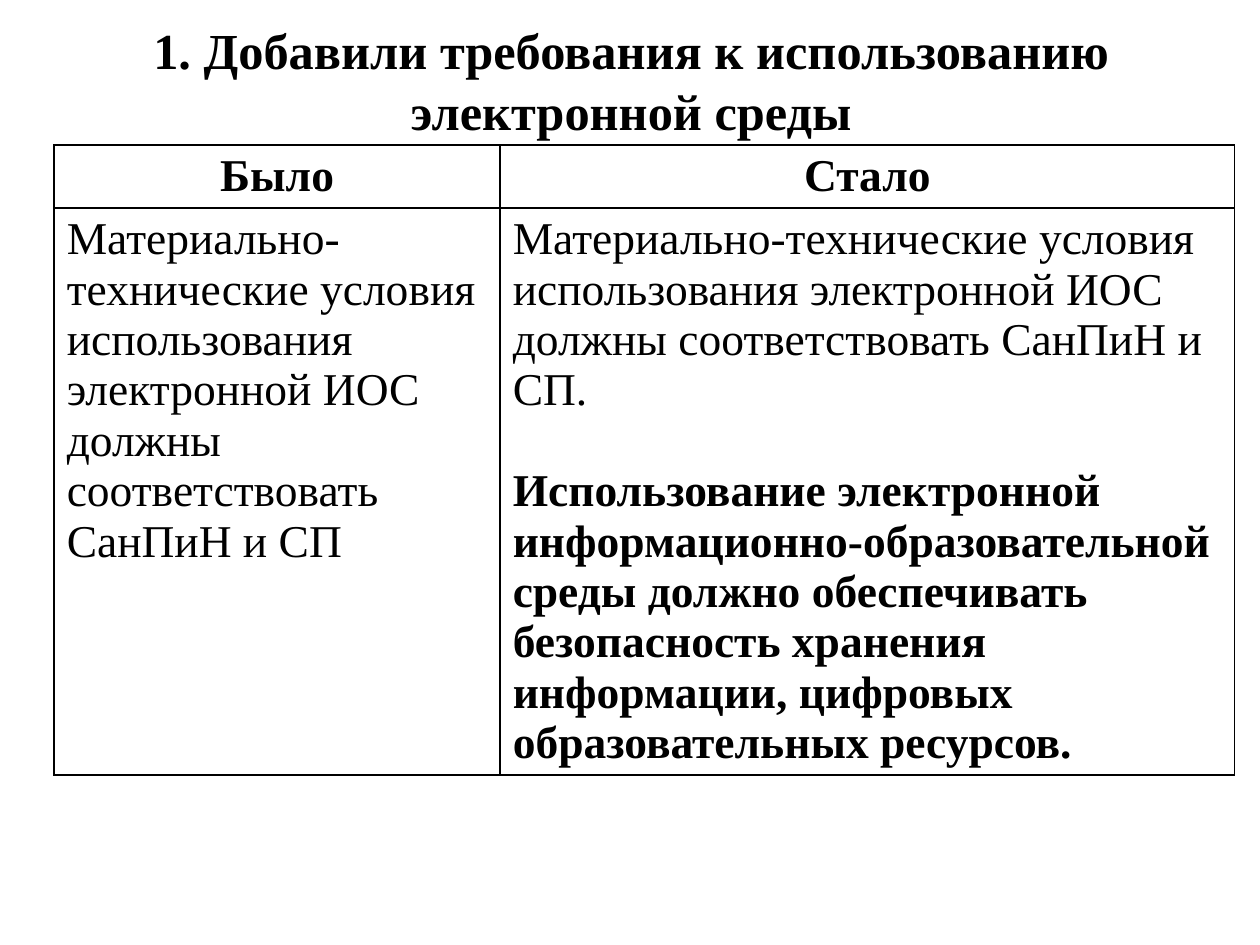
from dataclasses import dataclass

from lxml.etree import SubElement
from pptx import Presentation
from pptx.dml.color import RGBColor
from pptx.enum.text import MSO_ANCHOR, MSO_AUTO_SIZE, PP_ALIGN
from pptx.oxml.ns import qn
from pptx.util import Inches, Pt

TITLE = "1. Добавили требования к использованию электронной среды"
HEADERS = ["Было", "Стало"]
# Each cell is a list of (text, bold) paragraphs.
REQUIREMENTS = [
    [("Материально-технические условия использования электронной ИОС "
      "должны соответствовать СанПиН и СП", False)],
    [("Материально-технические условия использования электронной ИОС "
      "должны соответствовать СанПиН и СП.", False),
     ("Использование электронной информационно-образовательной среды "
      "должно обеспечивать безопасность хранения информации, цифровых "
      "образовательных ресурсов.", True)],
]


@dataclass(frozen=True)
class Theme:
    font: str = "Times New Roman"
    ink: RGBColor = RGBColor(0, 0, 0)
    title_size: float = 28.8
    table_size: float = 26
    paragraph_gap: float = 28.8
    border: float = 1


THEME = Theme()
SLIDE_WIDTH, SLIDE_HEIGHT = Inches(10), Inches(7.5)
TABLE_LEFT, TABLE_TOP = Inches(0.43), Inches(1.15)
COLUMN_WIDTHS = [Inches(3.54), Inches(5.83)]
ROW_HEIGHTS = [Inches(0.5), Inches(4.5)]


def add_text(paragraph, text, size, bold, alignment):
    paragraph.alignment = alignment
    run = paragraph.add_run()
    run.text = text
    run.font.name = THEME.font
    run.font.size = Pt(size)
    run.font.bold = bold
    run.font.color.rgb = THEME.ink


def add_borders(cell):
    properties = cell._tc.get_or_add_tcPr()
    for index, side in enumerate(("lnL", "lnR", "lnT", "lnB")):
        line = properties.makeelement(qn(f"a:{side}"), {"w": str(Pt(THEME.border))})
        fill = SubElement(line, qn("a:solidFill"))
        SubElement(fill, qn("a:srgbClr"), val=str(THEME.ink))
        properties.insert(index, line)


def fill_cell(cell, paragraphs, alignment):
    cell.fill.background()
    add_borders(cell)
    frame = cell.text_frame
    for index, (text, bold) in enumerate(paragraphs):
        paragraph = frame.add_paragraph() if index else frame.paragraphs[0]
        if index:
            paragraph.space_before = Pt(THEME.paragraph_gap)
        add_text(paragraph, text, THEME.table_size, bold, alignment)


def add_title(slide):
    title = slide.shapes.title
    title.left, title.top = Inches(0.51), Inches(0.21)
    title.width, title.height = Inches(9), Inches(0.85)
    frame = title.text_frame
    frame.word_wrap = True
    frame.auto_size = MSO_AUTO_SIZE.NONE
    frame.vertical_anchor = MSO_ANCHOR.MIDDLE
    add_text(frame.paragraphs[0], TITLE, THEME.title_size, True, PP_ALIGN.CENTER)


def add_comparison(slide):
    table = slide.shapes.add_table(
        len(ROW_HEIGHTS), len(COLUMN_WIDTHS), TABLE_LEFT, TABLE_TOP,
        sum(COLUMN_WIDTHS), sum(ROW_HEIGHTS)).table
    table.first_row = table.horz_banding = False
    for row, height in zip(table.rows, ROW_HEIGHTS):
        row.height = height
    for index, width in enumerate(COLUMN_WIDTHS):
        table.columns[index].width = width
        fill_cell(table.cell(0, index), [(HEADERS[index], True)], PP_ALIGN.CENTER)
        fill_cell(table.cell(1, index), REQUIREMENTS[index], PP_ALIGN.LEFT)


def main():
    presentation = Presentation()
    presentation.slide_width, presentation.slide_height = SLIDE_WIDTH, SLIDE_HEIGHT
    slide = presentation.slides.add_slide(presentation.slide_layouts[5])
    add_title(slide)
    add_comparison(slide)
    presentation.save("out.pptx")


if __name__ == "__main__":
    main()
